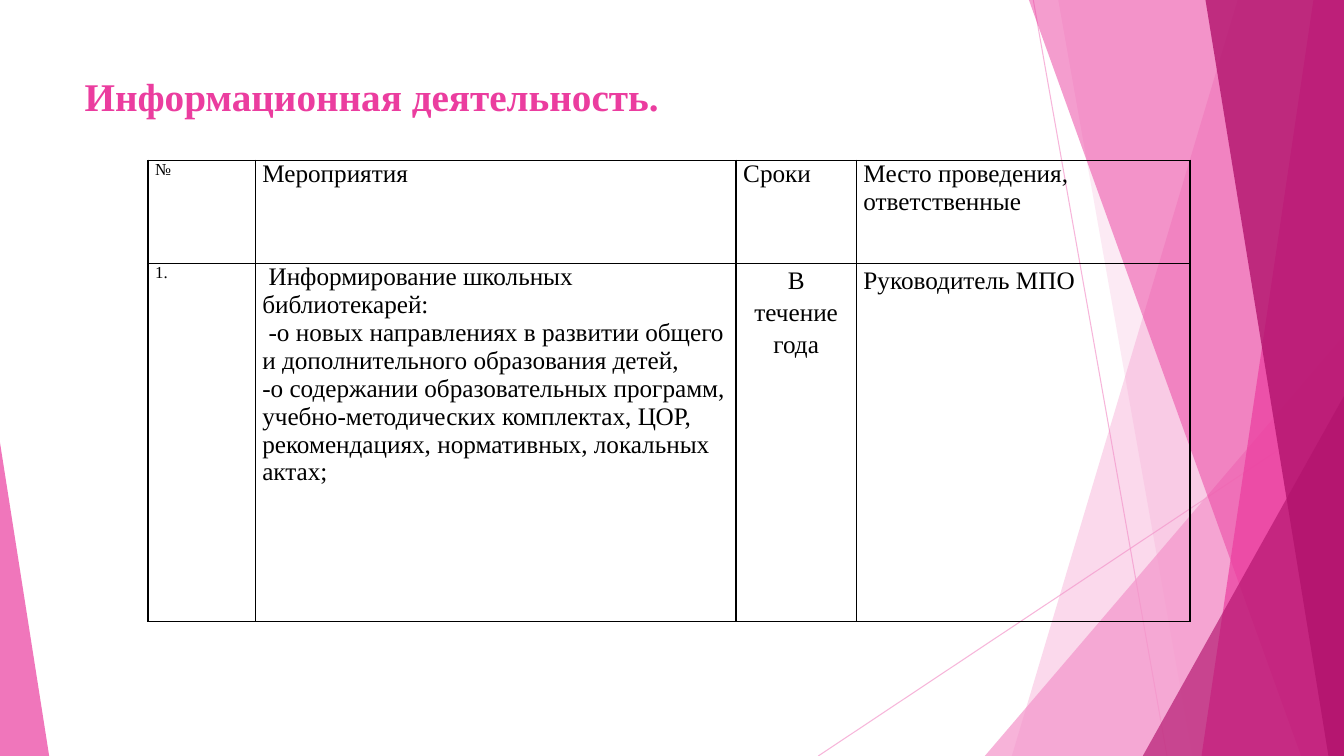
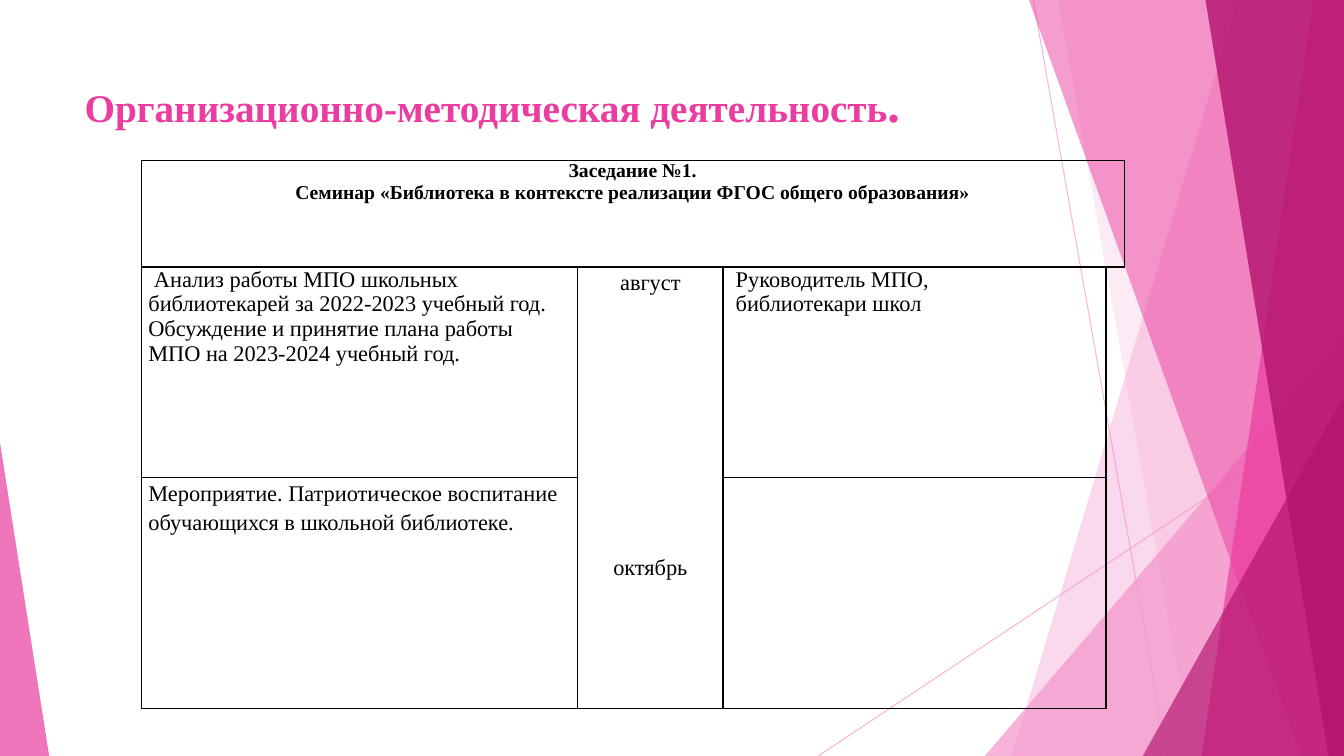
import dataclasses

import lxml.etree
import pptx
import pptx.dml.color
import pptx.enum.shapes
import pptx.enum.text
import pptx.oxml.ns
import pptx.util

Cm = pptx.util.Cm
Pt = pptx.util.Pt
qn = pptx.oxml.ns.qn
CENTER = pptx.enum.text.PP_ALIGN.CENTER

WIDTH, HEIGHT = 33.87, 19.05
FONT = "Times New Roman"
LIGHT_PINK, PINK, CRIMSON, BLACK = "F496CB", "EB3D9F", "B2136D", "000000"
ALL_SIDES = "LRTB"


def color(hex_string):
    return pptx.dml.color.RGBColor.from_string(hex_string)


def set_opacity(shape, percent):
    for element in shape.element.spPr.iter(qn("a:srgbClr")):
        lxml.etree.SubElement(element, qn("a:alpha"), val=str(percent * 1000))


@dataclasses.dataclass
class Line:
    """One paragraph of a table cell."""
    text: str
    size: int = 18
    bold: bool = False
    align: object = None
    spacing: float = 1.0
    before: int = 0


class Deck:
    """Holds the shared style and the slide being filled."""

    def __init__(self):
        self.deck = pptx.Presentation()
        self.deck.slide_width = Cm(WIDTH)
        self.deck.slide_height = Cm(HEIGHT)
        self.layout = self.deck.slide_layouts[5]
        self.slide = None
        title = self.layout.placeholders[0]
        title.left, title.top = Cm(1.88), Cm(1.7)
        title.width, title.height = Cm(23.88), Cm(3.66)
        title.text_frame.vertical_anchor = pptx.enum.text.MSO_ANCHOR.TOP

    def add_slide(self):
        self.slide = self.deck.slides.add_slide(self.layout)

    def add_run(self, para, text, size, hex_string, bold):
        span = para.add_run()
        span.text = text
        span.font.name = FONT
        span.font.size = Pt(size)
        span.font.bold = bold
        span.font.color.rgb = color(hex_string)

    def title(self, *parts):
        """Fill the title with (text, size) parts."""
        para = self.slide.shapes.title.text_frame.paragraphs[0]
        para.alignment = pptx.enum.text.PP_ALIGN.LEFT
        for text, size in parts:
            self.add_run(para, text, size, PINK, True)

    def paint(self, shape, hex_string, opacity):
        shape.shadow.inherit = False
        shape.fill.solid()
        shape.fill.fore_color.rgb = color(hex_string)
        shape.line.fill.background()
        set_opacity(shape, opacity)

    def band(self, top_x, bottom_x, hex_string, opacity):
        """Fill from a slanted left edge to the right side of the slide."""
        builder = self.slide.shapes.build_freeform(Cm(top_x), 0)
        corners = [(WIDTH, 0), (WIDTH, HEIGHT), (bottom_x, HEIGHT)]
        builder.add_line_segments([(Cm(x), Cm(y)) for x, y in corners], close=True)
        self.paint(builder.convert_to_shape(), hex_string, opacity)

    def corner(self, left, top, width, tip, hex_string, opacity):
        """Stand a triangle on the bottom edge; tip is 0 (left) to 1 (right)."""
        triangle = self.slide.shapes.add_shape(
            pptx.enum.shapes.MSO_SHAPE.ISOSCELES_TRIANGLE,
            Cm(left), Cm(top), Cm(width), Cm(HEIGHT - top))
        triangle.adjustments[0] = tip
        self.paint(triangle, hex_string, opacity)

    def ray(self, start, end):
        connector = self.slide.shapes.add_connector(
            pptx.enum.shapes.MSO_CONNECTOR.STRAIGHT,
            *(Cm(value) for value in start + end))
        connector.line.color.rgb = color(LIGHT_PINK)
        connector.line.width = Pt(0.75)
        set_opacity(connector, 70)
        lxml.etree.SubElement(connector.element.spPr, qn("a:effectLst"))

    def move_to_layout(self):
        """Move the drawn shapes behind the layout's placeholders."""
        drawn = [shape for shape in self.slide.shapes if not shape.is_placeholder]
        for index, shape in enumerate(drawn):
            shape.element.xpath(".//p:cNvPr")[0].set("id", str(101 + index))
            self.layout.shapes.element.insert(2 + index, shape.element)

    def backdrop(self):
        self.ray((26.04, 0), (29.41, HEIGHT))
        self.ray((WIDTH, 10.24), (20.62, HEIGHT))
        self.band(31.19, 25.5, LIGHT_PINK, 36)
        self.band(26.67, 30.05, LIGHT_PINK, 20)
        self.corner(24.82, 8.46, WIDTH - 24.82, 1, LIGHT_PINK, 72)
        self.band(25.93, 32.79, PINK, 50)
        self.band(33.1, 30.28, PINK, 70)
        self.band(30.38, 33.48, CRIMSON, 80)
        self.corner(28.8, 9.98, WIDTH - 28.8, 1, CRIMSON, 66)
        self.corner(0, 11.15, 1.24, 0, PINK, 70)
        self.move_to_layout()

    def borders(self, cell, sides):
        properties = cell._tc.get_or_add_tcPr()
        for side in ALL_SIDES:
            edge = lxml.etree.SubElement(properties, qn("a:ln" + side), w=str(Pt(1)))
            if side in sides:
                fill = lxml.etree.SubElement(edge, qn("a:solidFill"))
                lxml.etree.SubElement(fill, qn("a:srgbClr"), val=BLACK)
            else:
                lxml.etree.SubElement(edge, qn("a:noFill"))

    def fill_cell(self, cell, lines):
        frame = cell.text_frame
        for index, line in enumerate(lines):
            para = frame.add_paragraph() if index else frame.paragraphs[0]
            para.alignment = line.align
            para.line_spacing = line.spacing
            para.space_before = Pt(line.before)
            self.add_run(para, line.text, line.size, BLACK, line.bold)

    def table(self, left, top, columns, rows, contents, merges=(), sides=None):
        """Add a ruled table; contents and sides are keyed by (row, column)."""
        table = self.slide.shapes.add_table(
            len(rows), len(columns), Cm(left), Cm(top),
            Cm(sum(columns)), Cm(sum(rows))).table
        table.first_row = table.horz_banding = False
        for column, width in zip(table.columns, columns):
            column.width = Cm(width)
        for row, height in zip(table.rows, rows):
            row.height = Cm(height)
        for first, last in merges:
            table.cell(*first).merge(table.cell(*last))
        for r in range(len(rows)):
            for c in range(len(columns)):
                cell = table.cell(r, c)
                cell.margin_left = cell.margin_right = Cm(0.18)
                cell.margin_top = cell.margin_bottom = 0
                self.borders(cell, (sides or {}).get((r, c), ALL_SIDES))
                cell.fill.background()
                self.fill_cell(cell, contents.get((r, c), []))


def information_slide(deck):
    deck.title(("Информационная деятельность.", 28))
    deck.table(3.73, 4.04, [2.7, 12.12, 3.03, 8.41], [2.59, 9.04], {
        (0, 0): [Line("№", 12)],
        (0, 1): [Line("Мероприятия")],
        (0, 2): [Line("Сроки")],
        (0, 3): [Line("Место проведения, ответственные")],
        (1, 0): [Line("1.", 12)],
        (1, 1): [
            Line(" Информирование школьных библиотекарей:"),
            Line(" -о новых направлениях в развитии общего и дополнительного "
                 "образования детей,"),
            Line("-о содержании образовательных программ, учебно-методических "
                 "комплектах, ЦОР, рекомендациях, нормативных, локальных актах;"),
        ],
        (1, 2): [Line("В течение года", align=CENTER, spacing=1.15)],
        (1, 3): [Line("Руководитель МПО", spacing=1.15)],
    })


def methodical_slide(deck):
    deck.title(("Организационно-методическая деятельность", 28), (".", 36))
    deck.table(3.56, 4.04, [11, 3.66, 9.65, 0.46], [2.69, 5.31, 5.82], {
        (0, 0): [
            Line("Заседание №1.", 14, True, CENTER),
            Line("Семинар «Библиотека в контексте реализации ФГОС общего "
                 "образования»", 14, True, CENTER),
        ],
        (1, 0): [Line(" Анализ работы МПО школьных библиотекарей за 2022-2023 "
                      "учебный год. Обсуждение и принятие плана работы МПО на "
                      "2023-2024 учебный год.", 16)],
        (1, 1): [
            Line("август", 16, align=CENTER, spacing=1.15),
            Line("октябрь", 16, align=CENTER, spacing=1.15, before=183),
        ],
        (1, 2): [Line(" Руководитель МПО,", 16), Line(" библиотекари школ", 16)],
        (2, 0): [Line("Мероприятие. Патриотическое воспитание обучающихся в "
                      "школьной библиотеке.", 16, spacing=1.15)],
    }, merges=[((0, 0), (0, 3)), ((1, 1), (2, 1))],
        sides={(1, 3): "LT", (2, 3): "L"})


def main():
    deck = Deck()
    deck.add_slide()
    deck.backdrop()
    information_slide(deck)
    deck.add_slide()
    methodical_slide(deck)
    deck.deck.save("out.pptx")


if __name__ == "__main__":
    main()
